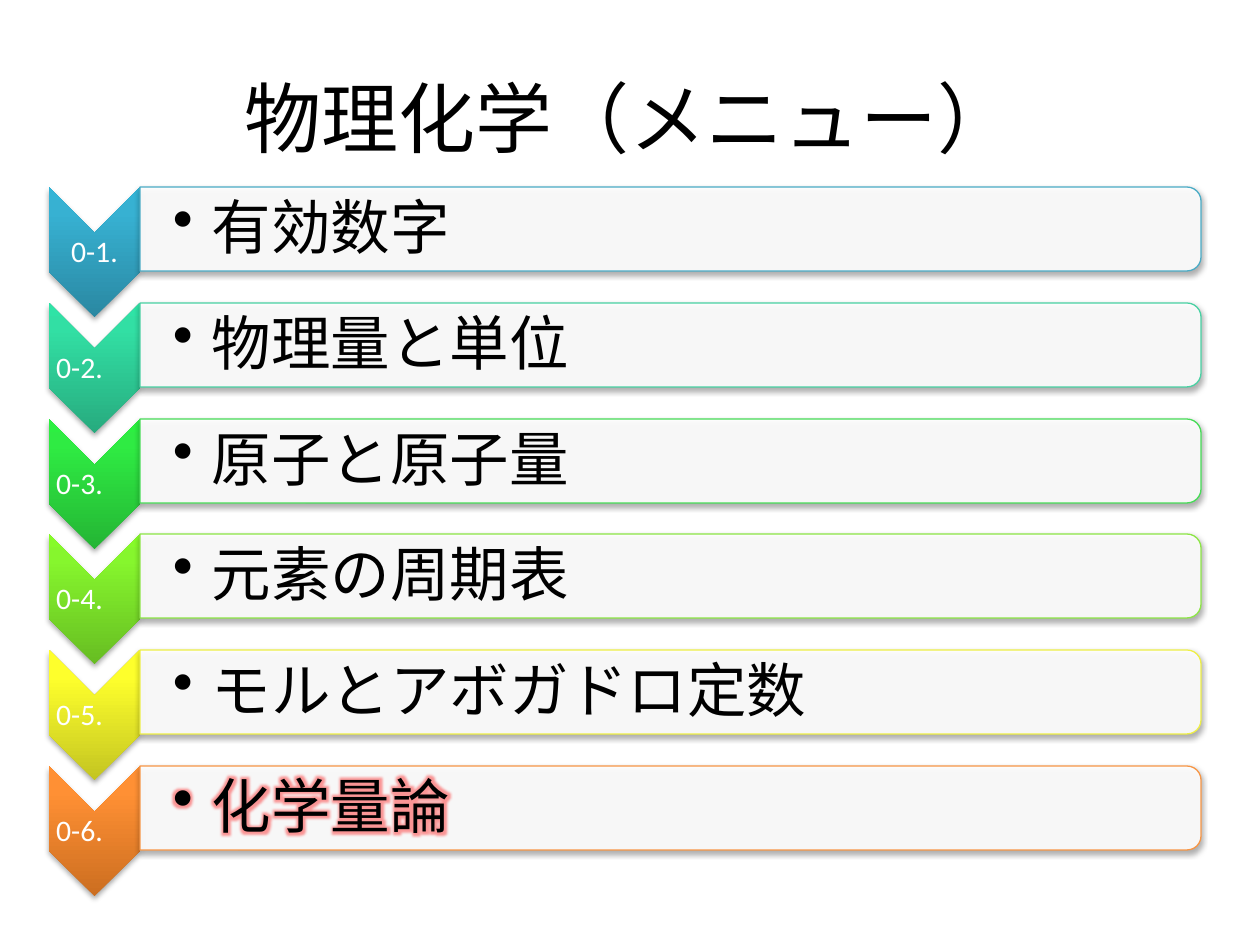
from typing import NamedTuple

from lxml.etree import SubElement, fromstring
from pptx import Presentation
from pptx.dml.color import RGBColor
from pptx.enum.shapes import MSO_SHAPE as SHAPE
from pptx.enum.text import MSO_ANCHOR as ANCHOR, PP_ALIGN as ALIGN
from pptx.oxml.ns import nsdecls, qn
from pptx.util import Emu, Pt

PX_PER_INCH = 126
FONT = "Calibri"
FIRST_TOP, LAST_TOP = 187, 766


class Box(NamedTuple):
    left: int
    top: int
    width: int
    height: int


class MenuItem(NamedTuple):
    number: str
    topic: str
    line: str
    stops: tuple[str, str, str]
    glow: str = ""


ITEMS = [
    MenuItem("0-1.", "有効数字", "4BACC6", ("2A88A2", "37B1D2", "34B4D6")),
    MenuItem("0-2.　", "物理量と単位", "49D1A3", ("27AB7E", "32DFA4", "2FE3A6")),
    MenuItem("0-3.　", "原子と原子量", "47DC57", ("24B534", "2FEB43", "2CEF41")),
    MenuItem("0-4.　", "元素の周期表", "8DE646", ("67BD22", "86F62D", "86FB29")),
    MenuItem("0-5.　", "モルとアボガドロ定数", "EEEF46", ("C4C521", "FEFF2C", "FEFF2D")),
    MenuItem("0-6.　", "化学量論", "F79646", ("CC6E20", "FF9034", "FF9136"), "FF0000"),
]


def px(n: float) -> Emu:
    return Emu(round(n * 914400 / PX_PER_INCH))


def rgb(color: str) -> RGBColor:
    return RGBColor.from_string(color)


def add_turned_shape(slide, kind, box: Box):
    """Add a shape turned by 90 degrees that covers box once turned."""
    left = box.left + (box.width - box.height) / 2
    top = box.top + (box.height - box.width) / 2
    sp = slide.shapes.add_shape(kind, px(left), px(top), px(box.height), px(box.width))
    sp.rotation = 90
    sp.shadow.inherit = False
    sp._element.spPr.find(qn("a:effectLst")).append(fromstring(
        f'<a:outerShdw {nsdecls("a")} blurRad="40000" dist="23000" dir="5400000" '
        'rotWithShape="0"><a:srgbClr val="000000"><a:alpha val="35000"/>'
        '</a:srgbClr></a:outerShdw>'))
    return sp


def add_chevron(slide, box: Box, stops: tuple[str, str, str]) -> None:
    sp = add_turned_shape(slide, SHAPE.CHEVRON, box)
    sp.line.fill.background()
    gs = "".join(f'<a:gs pos="{pos}000"><a:srgbClr val="{color}"/></a:gs>'
                 for pos, color in zip((0, 80, 100), stops))
    sp._element.spPr.find(qn("a:prstGeom")).addnext(fromstring(
        f'<a:gradFill {nsdecls("a")} rotWithShape="0"><a:gsLst>{gs}</a:gsLst>'
        '<a:lin ang="16200000" scaled="0"/></a:gradFill>'))


def add_bar(slide, box: Box, line: str) -> None:
    sp = add_turned_shape(slide, SHAPE.ROUND_2_SAME_RECTANGLE, box)
    sp.fill.solid()
    sp.fill.fore_color.rgb = rgb("FFFFFF")
    color = sp._element.spPr.find(qn("a:solidFill")).find(qn("a:srgbClr"))
    SubElement(color, qn("a:alpha"), val="90000")
    sp.line.color.rgb = rgb(line)
    sp.line.width = Pt(0.75)


def set_font(p, size: int, color: str) -> None:
    p.font.name = FONT
    p.font.size = Pt(size)
    p.font.color.rgb = rgb(color)


def add_text(slide, box: Box, text: str, size: int, color: str, inset: int, left_inset: int):
    """Add a one-line text box and return its paragraph."""
    tf = slide.shapes.add_textbox(*map(px, box)).text_frame
    tf.word_wrap = True
    tf.vertical_anchor = ANCHOR.MIDDLE
    tf.margin_top = tf.margin_right = tf.margin_bottom = px(inset)
    tf.margin_left = px(left_inset)
    p = tf.paragraphs[0]
    p.add_run().text = text
    p.line_spacing = 0.9
    set_font(p, size, color)
    return p


def add_bullet(p) -> None:
    p.level = 1
    pPr = p._p.get_or_add_pPr()
    pPr.set("marL", str(px(39)))
    pPr.set("indent", str(-px(39)))
    pPr.find(qn("a:defRPr")).addprevious(
        fromstring(f'<a:buChar {nsdecls("a")} char="•"/>'))


def add_glow(r, color: str) -> None:
    r._r.get_or_add_rPr().append(fromstring(
        f'<a:effectLst {nsdecls("a")}><a:glow rad="{Pt(8)}"><a:srgbClr val="{color}">'
        '<a:alpha val="40000"/></a:srgbClr></a:glow></a:effectLst>'))


def add_item(slide, item: MenuItem, top: int) -> None:
    add_chevron(slide, Box(49, top, 91, 130), item.stops)
    p = add_text(slide, Box(49, top + 46, 91, 39), item.number, 17, "FFFFFF", 1, 1)
    p.alignment = ALIGN.CENTER
    add_bar(slide, Box(140, top, 1061, 84), item.line)
    p = add_text(slide, Box(140, top + 5, 1057, 76), item.topic, 34, "000000", 3, 33)
    add_bullet(p)
    if item.glow:
        add_glow(p.runs[0], item.glow)


def add_title(slide, text: str) -> None:
    title = slide.shapes.title
    title.left, title.top, title.width, title.height = map(px, Box(63, 38, 1134, 158))
    tf = title.text_frame
    tf.text = text
    tf.vertical_anchor = ANCHOR.MIDDLE
    p = tf.paragraphs[0]
    p.alignment = ALIGN.CENTER
    set_font(p, 44, "000000")


def main() -> None:
    prs = Presentation()
    prs.slide_width, prs.slide_height = px(1260), px(945)
    slide = prs.slides.add_slide(prs.slide_layouts[5])
    add_title(slide, "物理化学（メニュー）")
    pitch = (LAST_TOP - FIRST_TOP) / (len(ITEMS) - 1)
    for i, item in enumerate(ITEMS):
        add_item(slide, item, round(FIRST_TOP + i * pitch))
    prs.save("out.pptx")


if __name__ == "__main__":
    main()
